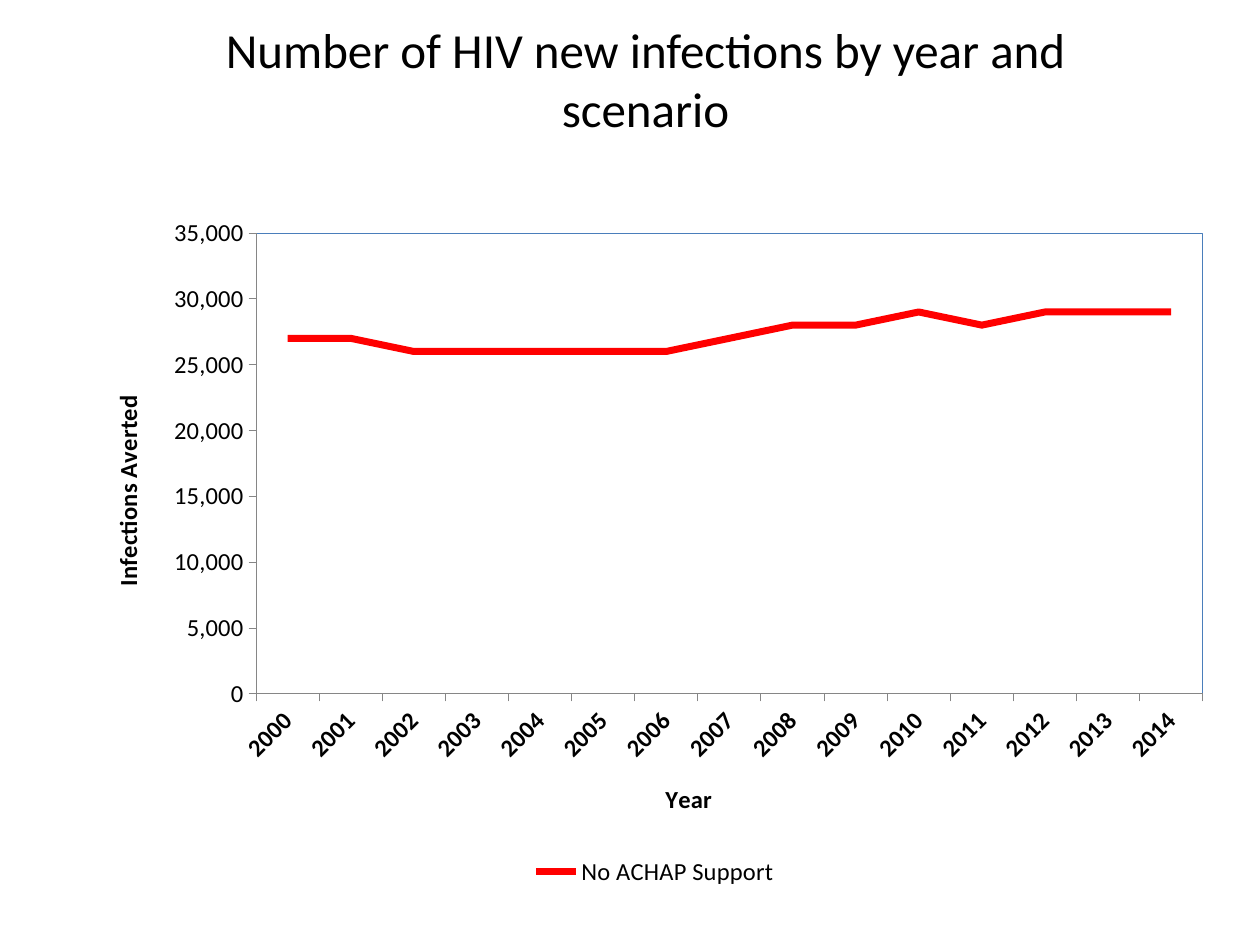
from lxml import etree
from pptx import Presentation
from pptx.chart.data import CategoryChartData
from pptx.dml.color import RGBColor
from pptx.enum.chart import (XL_CHART_TYPE, XL_LEGEND_POSITION, XL_MARKER_STYLE,
                             XL_TICK_MARK)
from pptx.enum.text import MSO_ANCHOR, PP_ALIGN
from pptx.oxml import parse_xml
from pptx.oxml.ns import nsdecls, qn
from pptx.util import Pt

PX = 914400 / 126
FONT = "Calibri"
LINE_CHART = XL_CHART_TYPE.LINE
LEGEND_BOTTOM = XL_LEGEND_POSITION.BOTTOM
NO_MARKER = XL_MARKER_STYLE.NONE
OUTSIDE, NO_TICK = XL_TICK_MARK.OUTSIDE, XL_TICK_MARK.NONE
CENTER, MIDDLE = PP_ALIGN.CENTER, MSO_ANCHOR.MIDDLE
THIN = Pt(0.5)

TITLE_BOX = (194, 0, 903, 157)
CHART_BOX = (84, 204, 1142, 688)
PLOT_BOX = (172, 29, 947, 461)
YEARS = [str(year) for year in range(2000, 2015)]
INFECTIONS = [27000, 27000, 26000, 26000, 26000, 26000, 26000, 27000,
              28000, 28000, 29000, 28000, 29000, 29000, 29000]


def emu(box):
    return [round(length * PX) for length in box]


def color(hex_text):
    return RGBColor.from_string(hex_text)


def style_font(font, size, bold=False):
    values = {"name": FONT, "size": Pt(size), "bold": bold}
    for name, value in values.items():
        setattr(font, name, value)
    font.color.rgb = color("000000")


def manual_layout(chart_box, left, top, size=None):
    """Return a c:layout element for a place in px within the chart."""
    width, height = chart_box[2:]
    values = {"xMode": "edge", "yMode": "edge",
              "x": round(left / width, 4), "y": round(top / height, 4)}
    if size:
        values = {"layoutTarget": "inner", **values,
                  "w": round(size[0] / width, 4),
                  "h": round(size[1] / height, 4)}
    items = "".join(f'<c:{tag} val="{value}"/>' for tag, value in values.items())
    return parse_xml(f'<c:layout {nsdecls("c")}>'
                     f'<c:manualLayout>{items}</c:manualLayout></c:layout>')


def replace_layout(parent, layout, index):
    for old_layout in parent.findall(qn("c:layout")):
        parent.remove(old_layout)
    parent.insert(index, layout)


def add_title(slide, box, text):
    frame = slide.shapes.add_textbox(*emu(box)).text_frame
    frame.word_wrap = True
    frame.vertical_anchor = MIDDLE
    paragraph = frame.paragraphs[0]
    paragraph.text = text
    paragraph.alignment = CENTER
    style_font(paragraph.font, 28)


def style_axis(axis, chart_box, title, title_place, bold):
    values = {"has_major_gridlines": False, "major_tick_mark": OUTSIDE,
              "minor_tick_mark": NO_TICK}
    for name, value in values.items():
        setattr(axis, name, value)
    axis.format.line.color.rgb = color("868686")
    axis.format.line.width = THIN
    style_font(axis.tick_labels.font, 14, bold)
    frame = axis.axis_title.text_frame
    frame.text = title
    style_font(frame.paragraphs[0].runs[0].font, 14, True)
    title_element = axis.axis_title._element
    replace_layout(title_element, manual_layout(chart_box, *title_place), 1)


def frame_plot(chart, chart_box, plot_box):
    """Place the plot area and draw its border."""
    plot_area = chart._chartSpace.chart.plotArea
    layout = manual_layout(chart_box, *plot_box[:2], plot_box[2:])
    replace_layout(plot_area, layout, 0)
    border = etree.SubElement(plot_area, qn("c:spPr"))
    etree.SubElement(border, qn("a:noFill"))
    line = etree.SubElement(border, qn("a:ln"), w=str(THIN))
    fill = etree.SubElement(line, qn("a:solidFill"))
    etree.SubElement(fill, qn("a:srgbClr"), val="4A7EBB")


def add_infections_chart(slide, box):
    data = CategoryChartData(number_format="#,##0")
    data.categories = YEARS
    data.add_series("No ACHAP Support", INFECTIONS)
    chart = slide.shapes.add_chart(LINE_CHART, *emu(box), data).chart
    style_font(chart.font, 14)
    chart.has_title = False
    chart.has_legend = True
    chart.legend.position = LEGEND_BOTTOM
    chart.legend.include_in_layout = False
    style_font(chart.legend.font, 14)

    chart.plots[0].vary_by_categories = False
    series = chart.plots[0].series[0]
    series.smooth = False
    series.marker.style = NO_MARKER
    series.format.line.color.rgb = color("FF0000")
    series.format.line.width = Pt(4)

    years, counts = chart.category_axis, chart.value_axis
    style_axis(years, box, "Year", (577, 574), True)
    style_axis(counts, box, "Infections Averted", (22, 187), False)
    years._element.txPr.bodyPr.set("rot", "-2700000")
    scale = {"minimum_scale": 0, "maximum_scale": 35000, "major_unit": 5000}
    for name, value in scale.items():
        setattr(counts, name, value)
    counts.tick_labels.number_format = "#,##0"
    counts.tick_labels.number_format_is_linked = False
    frame_plot(chart, box, PLOT_BOX)


def main():
    presentation = Presentation()
    presentation.slide_width, presentation.slide_height = emu((1260, 945))
    slide = presentation.slides.add_slide(presentation.slide_layouts[6])
    add_title(slide, TITLE_BOX, "Number of HIV new infections by year and scenario")
    add_infections_chart(slide, CHART_BOX)
    presentation.save("out.pptx")


if __name__ == "__main__":
    main()
